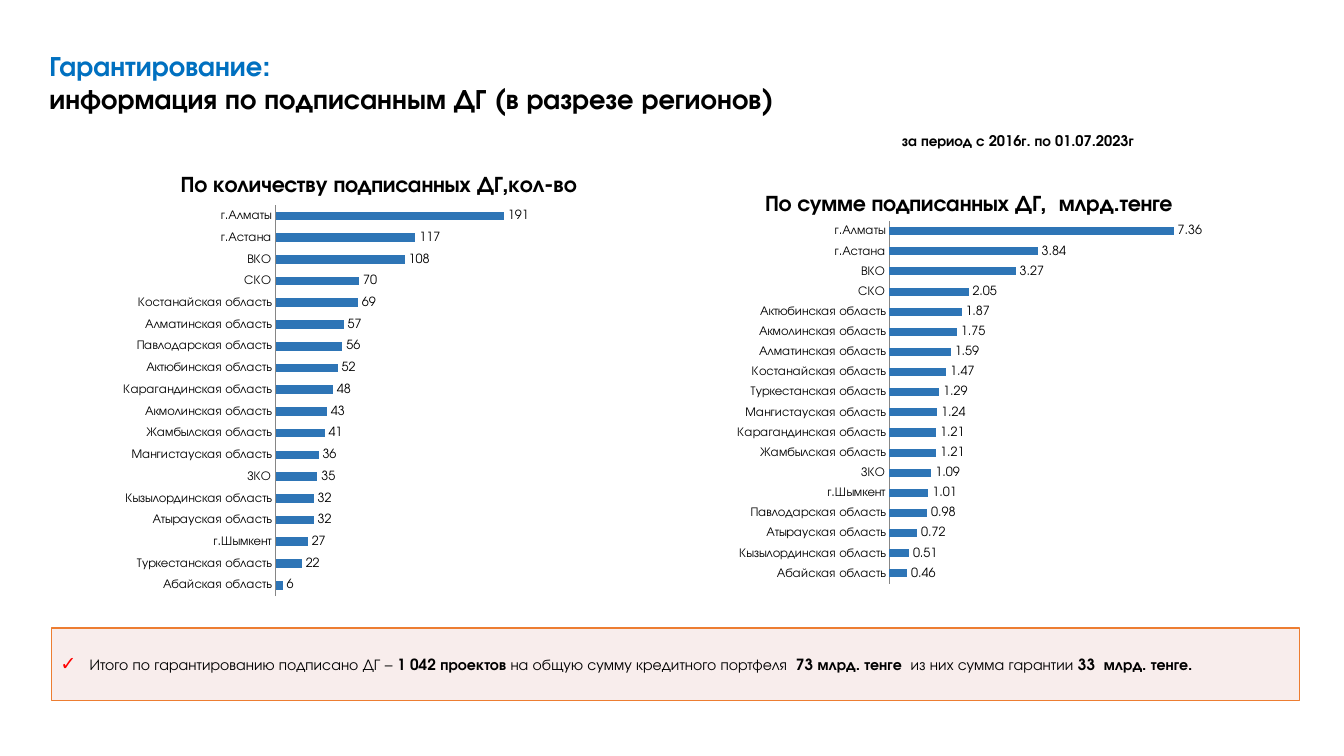
from dataclasses import dataclass

from lxml.etree import SubElement
from pptx import Presentation
from pptx.chart.data import CategoryChartData
from pptx.dml.color import RGBColor
from pptx.enum.chart import XL_CHART_TYPE, XL_LABEL_POSITION, XL_TICK_MARK
from pptx.enum.text import MSO_ANCHOR, MSO_AUTO_SIZE, PP_ALIGN
from pptx.oxml import parse_xml
from pptx.oxml.ns import nsdecls, qn
from pptx.util import Cm, Pt


@dataclass(frozen=True)
class Theme:
    font: str = "TeX Gyre Adventor"
    black: str = "000000"
    blue: str = "0070C0"
    bar: str = "2E75B6"
    axis: str = "868686"
    pink: str = "F2DCDB"
    orange: str = "ED7D31"
    red: str = "FF0000"
    head: float = 20
    chart: float = 16
    note: float = 10.5
    body: float = 11
    label: float = 9


THEME = Theme()

COUNTS = {
    "Абайская область": 6, "Туркестанская область": 22, "г.Шымкент": 27,
    "Атырауская область": 32, "Кызылординская область": 32, "ЗКО": 35,
    "Мангистауская область": 36, "Жамбылская область": 41,
    "Акмолинская область": 43, "Карагандинская область": 48,
    "Актюбинская область": 52, "Павлодарская область": 56,
    "Алматинская область": 57, "Костанайская область": 69,
    "СКО": 70, "ВКО": 108, "г.Астана": 117, "г.Алматы": 191,
}
SUMS = {
    "Абайская область": 0.46, "Кызылординская область": 0.51,
    "Атырауская область": 0.72, "Павлодарская область": 0.98,
    "г.Шымкент": 1.01, "ЗКО": 1.09, "Жамбылская область": 1.21,
    "Карагандинская область": 1.21, "Мангистауская область": 1.24,
    "Туркестанская область": 1.29, "Костанайская область": 1.47,
    "Алматинская область": 1.59, "Акмолинская область": 1.75,
    "Актюбинская область": 1.87, "СКО": 2.05, "ВКО": 3.27,
    "г.Астана": 3.84, "г.Алматы": 7.36,
}
TOTAL = (
    ("Итого по гарантированию подписано ДГ – ", False),
    ("1 042 проектов ", True),
    ("на общую сумму кредитного портфеля  ", False),
    ("73 млрд. тенге  ", True),
    ("из них сумма гарантии", False),
    (" 33  млрд. тенге.", True),
)


def style(font, size, color=THEME.black, bold=False):
    font.name = THEME.font
    font.size = Pt(size)
    font.bold = bold
    font.color.rgb = RGBColor.from_string(color)


def write(para, text, **form):
    run = para.add_run()
    run.text = text
    style(run.font, **form)


def place(shape, left, top, width, height):
    shape.left, shape.top = Cm(left), Cm(top)
    shape.width, shape.height = Cm(width), Cm(height)


def add_head(slide):
    title = slide.shapes.title
    place(title, 0.99, 1.09, 21.79, 1.8)
    frame = title.text_frame
    frame.auto_size = MSO_AUTO_SIZE.NONE
    frame.vertical_anchor = MSO_ANCHOR.TOP
    para = frame.paragraphs[0]
    para.alignment = PP_ALIGN.LEFT
    write(para, "Гарантирование: ", size=THEME.head, color=THEME.blue, bold=True)
    para.add_line_break()
    write(para, "информация по подписанным ДГ (в разрезе регионов)",
          size=THEME.head, bold=True)


def add_note(slide, text):
    box = slide.shapes.add_textbox(Cm(22.48), Cm(3.2), Cm(6.71), Cm(0.71))
    box.text_frame.word_wrap = False
    write(box.text_frame.paragraphs[0], text, size=THEME.note, bold=True)


def set_mark(para, mark, color, scale):
    props = para._p.get_or_add_pPr()
    props.set("marL", str(Cm(0.76)))
    props.set("indent", str(Cm(-0.74)))
    tint = SubElement(props, qn("a:buClr"))
    SubElement(tint, qn("a:srgbClr"), val=color)
    SubElement(props, qn("a:buSzPct"), val=str(scale * 1000))
    SubElement(props, qn("a:buChar"), char=mark)


def add_total(slide):
    body = slide.placeholders[1]
    place(body, 1.3, 15.82, 31.45, 1.83)
    body.fill.solid()
    body.fill.fore_color.rgb = RGBColor.from_string(THEME.pink)
    tint = body._element.spPr.find(qn("a:solidFill")).find(qn("a:srgbClr"))
    SubElement(tint, qn("a:alpha"), val="50000")
    body.line.color.rgb = RGBColor.from_string(THEME.orange)
    body.line.width = Pt(1)
    frame = body.text_frame
    frame.auto_size = MSO_AUTO_SIZE.NONE
    frame.vertical_anchor = MSO_ANCHOR.MIDDLE
    frame.margin_left = frame.margin_right = Cm(0.2)
    frame.margin_top = frame.margin_bottom = Cm(0.1)
    para = frame.paragraphs[0]
    set_mark(para, "✓", THEME.red, 125)
    para.space_before, para.space_after = Pt(0), Pt(6)
    for text, bold in TOTAL:
        write(para, text, size=THEME.body, bold=bold)


def lay_out(x, y, size=None):
    parts = [("xMode", "edge"), ("yMode", "edge"), ("x", x), ("y", y)]
    if size:
        parts = [("layoutTarget", "inner"), *parts, ("w", size[0]), ("h", size[1])]
    inner = "".join(f'<c:{name} val="{val}"/>' for name, val in parts)
    return parse_xml(f'<c:layout {nsdecls("c")}><c:manualLayout>{inner}'
                     '</c:manualLayout></c:layout>')


def set_place(part, layout):
    for old in part.findall(qn("c:layout")):
        part.remove(old)
    text = part.find(qn("c:tx"))
    part.insert(0 if text is None else 1, layout)


def add_bars(slide, title, data, box, spot, plot, top, form):
    source = CategoryChartData()
    source.categories = list(data)
    source.add_series("Series 1", list(data.values()))
    chart = slide.shapes.add_chart(XL_CHART_TYPE.BAR_CLUSTERED,
                                   *map(Cm, box), source).chart
    style(chart.font, THEME.label)
    chart.has_legend = False
    chart.has_title = True
    write(chart.chart_title.text_frame.paragraphs[0], title,
          size=THEME.chart, bold=True)
    chart.chart_title.include_in_layout = False
    set_place(chart.chart_title._element, lay_out(*spot))
    x, y, *size = plot
    set_place(chart._chartSpace.chart.plotArea, lay_out(x, y, size))

    names = chart.category_axis
    names.major_tick_mark = XL_TICK_MARK.NONE
    names.has_major_gridlines = False
    names.format.line.color.rgb = RGBColor.from_string(THEME.axis)
    style(names.tick_labels.font, THEME.label)
    scale = chart.value_axis
    scale.visible = False
    scale.has_major_gridlines = False
    scale.minimum_scale, scale.maximum_scale = 0, top

    bars = chart.plots[0]
    bars.gap_width = 150
    bars.vary_by_categories = False
    fill = bars.series[0].format.fill
    fill.solid()
    fill.fore_color.rgb = RGBColor.from_string(THEME.bar)
    bars.has_data_labels = True
    labels = bars.data_labels
    labels.show_value = True
    labels.position = XL_LABEL_POSITION.OUTSIDE_END
    labels.number_format = form
    labels.number_format_is_linked = False
    style(labels.font, THEME.label)


def main():
    deck = Presentation()
    deck.slide_width, deck.slide_height = Cm(33.87), Cm(19.05)
    slide = deck.slides.add_slide(deck.slide_layouts[1])
    add_head(slide)
    add_note(slide, "за период с 2016г. по 01.07.2023г")
    add_total(slide)
    add_bars(slide, "По количеству подписанных ДГ,кол-во ", COUNTS,
             box=(1.14, 3.91, 15.77, 11.76), spot=(0.21, 0.03),
             plot=(0.368, 0.107, 0.478, 0.838), top=250, form="General")
    add_bars(slide, "По сумме подписанных ДГ,  млрд.тенге", SUMS,
             box=(16.13, 4.5, 16.03, 11.18), spot=(0.19, 0.02),
             plot=(0.392, 0.096, 0.486, 0.817), top=8, form="#,##0.00")
    deck.save("out.pptx")


if __name__ == "__main__":
    main()
